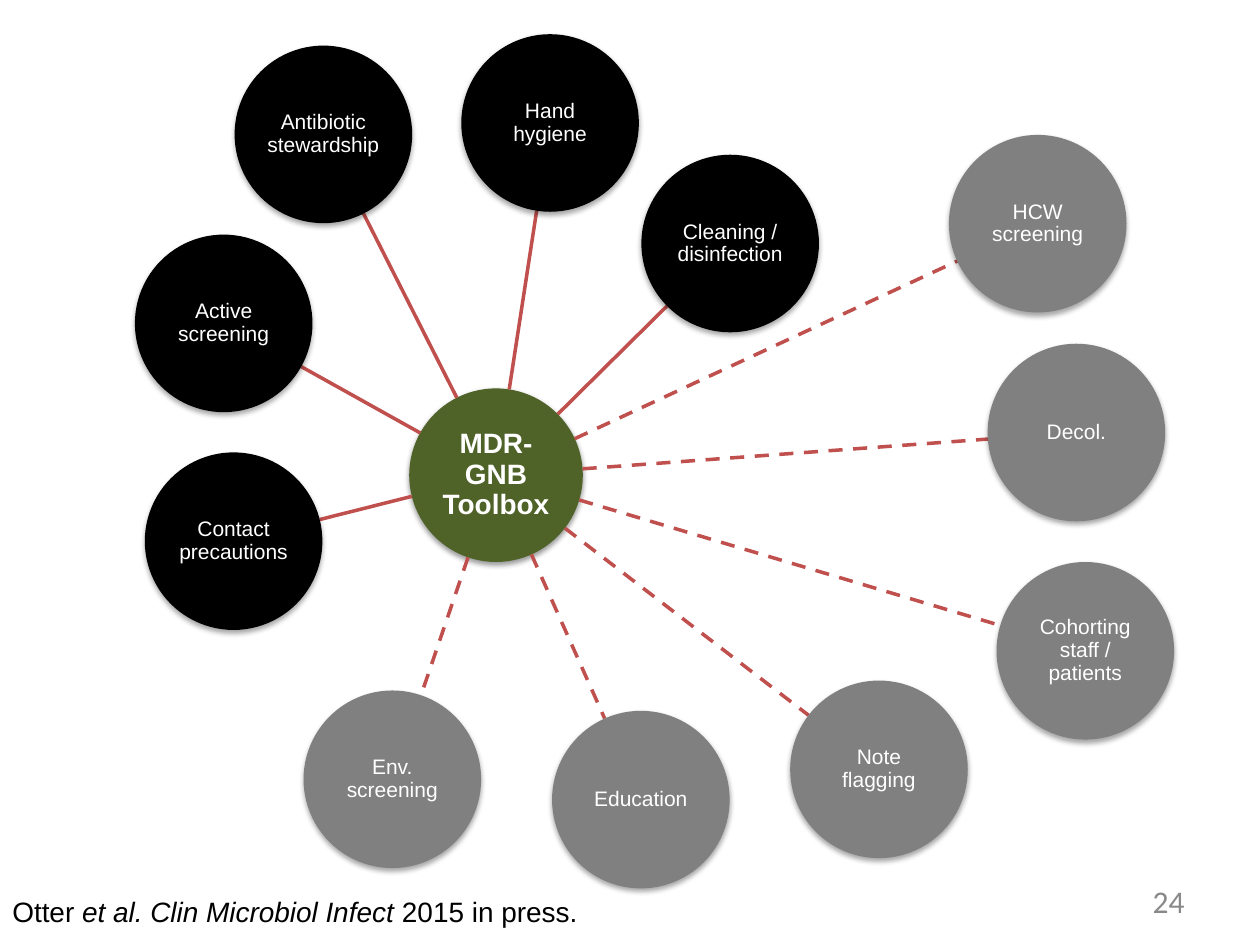
"""Build the MDR-GNB toolbox hub-and-spoke slide."""
from dataclasses import dataclass
from math import hypot

from lxml import etree
from pptx import Presentation
from pptx.dml.color import RGBColor
from pptx.enum.dml import MSO_LINE
from pptx.enum.shapes import MSO_CONNECTOR, MSO_SHAPE
from pptx.enum.text import MSO_ANCHOR, PP_ALIGN
from pptx.oxml.ns import qn
from pptx.util import Cm, Pt

DASH = MSO_LINE.DASH
STRAIGHT = MSO_CONNECTOR.STRAIGHT
OVAL = MSO_SHAPE.OVAL
MIDDLE = MSO_ANCHOR.MIDDLE
CENTER, RIGHT = PP_ALIGN.CENTER, PP_ALIGN.RIGHT

COLOURS = {
    "hub": "4F6228",
    "core": "000000",
    "optional": "808080",
    "spoke": "C0504D",
    "label": "FFFFFF",
    "citation": "000000",
    "page_number": "898989",
}
INSET = Cm(0.03)
TOOL_RADIUS = 1.79


@dataclass(frozen=True)
class Circle:
    """A labelled circle, with its centre and radius in centimetres."""
    label: str
    x: float
    y: float
    kind: str
    radius: float = TOOL_RADIUS
    size: int = 12
    bold: bool = False
    shadow_alpha: int = 35
    shadow_distance: float = 1.8


HUB = Circle("MDR-GNB Toolbox", 10, 9.58, "hub", 1.75, 16, True, 38, 1.6)
TOOLS = [
    Circle("Hand hygiene", 11.09, 2.48, "core"),
    Circle("Cleaning / disinfection", 14.72, 4.91, "core"),
    Circle("HCW screening", 20.92, 4.51, "optional"),
    Circle("Decol.", 21.7, 8.72, "optional"),
    Circle("Cohorting staff / patients", 21.88, 13.12, "optional"),
    Circle("Note flagging", 17.72, 15.51, "optional"),
    Circle("Education", 12.92, 16.12, "optional"),
    Circle("Env. screening", 7.91, 15.71, "optional"),
    Circle("Contact precautions", 4.71, 10.91, "core"),
    Circle("Active screening", 4.51, 6.52, "core"),
    Circle("Antibiotic stewardship", 6.52, 2.71, "core"),
]


def colour(name: str) -> RGBColor:
    """Return a named palette colour."""
    return RGBColor.from_string(COLOURS[name])


def format_run(run, size: int, colour_name: str, font: str = "Arial") -> None:
    """Set the font, size and colour of a run."""
    run.font.name = font
    run.font.size = Pt(size)
    run.font.color.rgb = colour(colour_name)


def add_shadow(shape, alpha: int, distance: float) -> None:
    """Give a shape a soft shadow straight below it."""
    shape.shadow.inherit = False
    effects = shape._element.spPr.find(qn("a:effectLst"))
    shadow = etree.SubElement(
        effects, qn("a:outerShdw"), blurRad=str(Pt(3.1)),
        dist=str(Pt(distance)), dir="5400000", rotWithShape="0")
    shade = etree.SubElement(shadow, qn("a:srgbClr"), val="000000")
    etree.SubElement(shade, qn("a:alpha"), val=str(alpha * 1000))


def add_circle(slide, circle: Circle) -> None:
    """Draw a labelled circle."""
    diameter = Cm(2 * circle.radius)
    shape = slide.shapes.add_shape(
        OVAL, Cm(circle.x - circle.radius), Cm(circle.y - circle.radius),
        diameter, diameter)
    shape.fill.solid()
    shape.fill.fore_color.rgb = colour(circle.kind)
    shape.line.fill.background()
    add_shadow(shape, circle.shadow_alpha, circle.shadow_distance)
    frame = shape.text_frame
    frame.text = circle.label
    frame.word_wrap = True
    frame.vertical_anchor = MIDDLE
    frame.margin_left = frame.margin_right = INSET
    frame.margin_top = frame.margin_bottom = INSET
    paragraph = frame.paragraphs[0]
    paragraph.alignment = CENTER
    paragraph.line_spacing = 0.9
    run = paragraph.runs[0]
    format_run(run, circle.size, "label")
    run.font.bold = circle.bold


def add_spoke(slide, tool: Circle) -> None:
    """Draw the line between the edges of the hub and a tool."""
    distance = hypot(tool.x - HUB.x, tool.y - HUB.y)
    across, down = (tool.x - HUB.x) / distance, (tool.y - HUB.y) / distance
    spoke = slide.shapes.add_connector(
        STRAIGHT,
        Cm(HUB.x + across * HUB.radius), Cm(HUB.y + down * HUB.radius),
        Cm(tool.x - across * tool.radius), Cm(tool.y - down * tool.radius))
    spoke.line.color.rgb = colour("spoke")
    spoke.line.width = Pt(2)
    if tool.kind == "optional":
        spoke.line.dash_style = DASH
    etree.SubElement(spoke._element.spPr, qn("a:effectLst"))


def add_text_frame(slide, left: float, top: float, width: float, height: float):
    """Add a wrapping text box and return its text frame."""
    box = slide.shapes.add_textbox(Cm(left), Cm(top), Cm(width), Cm(height))
    box.text_frame.word_wrap = True
    return box.text_frame


def add_citation(slide) -> None:
    """Write the source reference at the bottom left."""
    paragraph = add_text_frame(slide, 0, 17.91, 21.31, 0.94).paragraphs[0]
    for text, italic in (("Otter ", False),
                         ("et al. Clin Microbiol Infect ", True),
                         ("2015 in press.", False)):
        run = paragraph.add_run()
        run.text = text
        run.font.italic = italic
        format_run(run, 16, "citation")


def add_page_number(slide) -> None:
    """Write the page number at the bottom right."""
    frame = add_text_frame(slide, 18.21, 17.65, 5.92, 1.02)
    frame.text = "24"
    frame.vertical_anchor = MIDDLE
    frame.paragraphs[0].alignment = RIGHT
    format_run(frame.paragraphs[0].runs[0], 18, "page_number", "Calibri")


def main() -> None:
    """Build and save the presentation."""
    presentation = Presentation()
    presentation.slide_width, presentation.slide_height = Cm(25.4), Cm(19.05)
    slide = presentation.slides.add_slide(presentation.slide_layouts[6])
    add_circle(slide, HUB)
    for tool in TOOLS:
        add_spoke(slide, tool)
        add_circle(slide, tool)
    add_citation(slide)
    add_page_number(slide)
    presentation.save("out.pptx")


if __name__ == "__main__":
    main()
